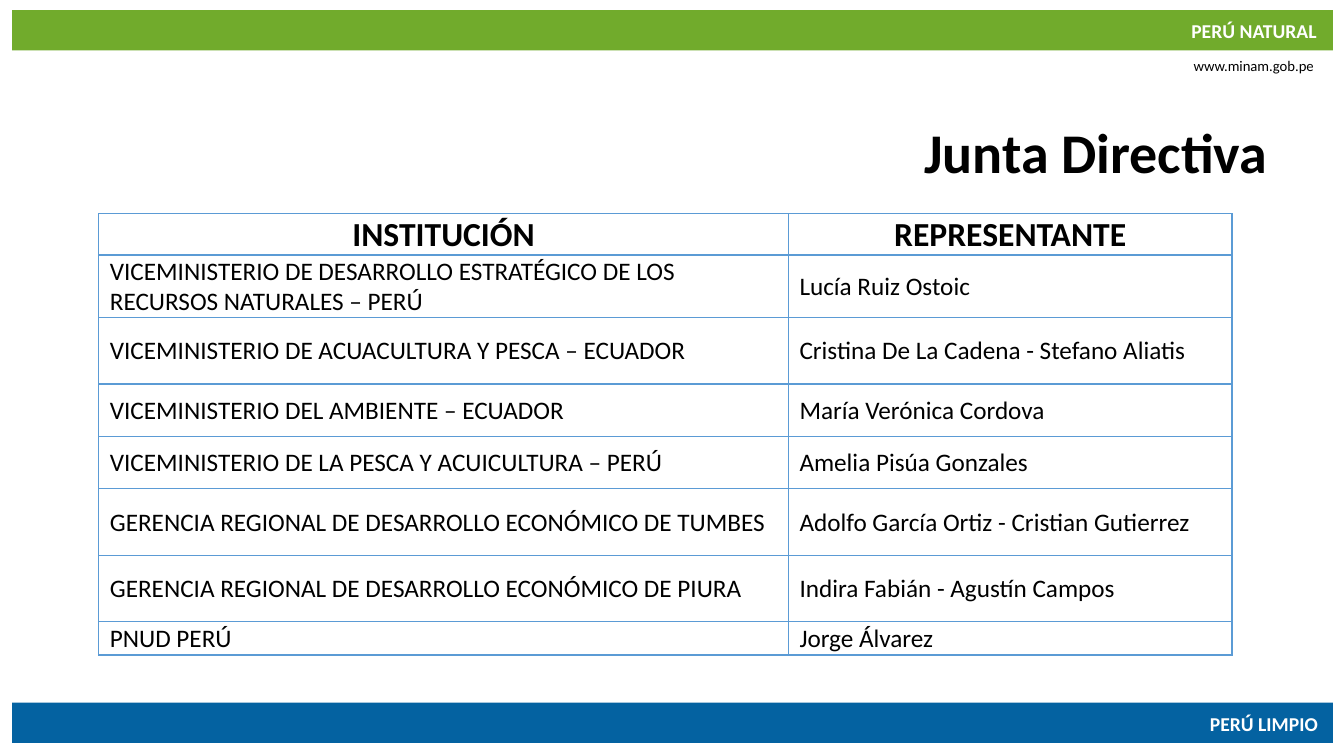
from lxml import etree
from pptx import Presentation
from pptx.dml.color import RGBColor
from pptx.enum.shapes import MSO_SHAPE as SHAPE
from pptx.enum.text import MSO_ANCHOR as ANCHOR, MSO_AUTO_SIZE as AUTO, PP_ALIGN as ALIGN
from pptx.oxml import parse_xml
from pptx.oxml.ns import nsdecls
from pptx.util import Inches, Pt

GREEN, BLUE, BORDER = "71AB2C", "0462A1", "5B9BD5"
BLACK, WHITE = "000000", "FFFFFF"


def rgb(color):
    return RGBColor.from_string(color)


def write(tf, text, size, color=BLACK, bold=False, align=ALIGN.RIGHT):
    """Put one formatted paragraph in the text frame and return it."""
    p = tf.paragraphs[0]
    p.alignment = align
    r = p.add_run()
    r.text = text
    for name, value in dict(name="Calibri", size=Pt(size), bold=bold).items():
        setattr(r.font, name, value)
    r.font.color.rgb = rgb(color)
    return p


prs = Presentation()
prs.slide_width, prs.slide_height = Inches(13.33), Inches(7.5)
s = prs.slides.add_slide(prs.slide_layouts[5])

# Bands at the foot and the head
for top, color in [(6.97, BLUE), (0.1, GREEN)]:
    sp = s.shapes.add_shape(SHAPE.RECTANGLE, Inches(0.12), Inches(top), Inches(13.1), Inches(0.4))
    sp.shadow.inherit = False
    sp.fill.solid()
    sp.fill.fore_color.rgb = rgb(color)
    sp.line.fill.background()

labels = [
    ("PERÚ NATURAL", 11.7, 0.14, 1.46, 0.34, 14, WHITE, True),
    ("PERÚ LIMPIO", 11.89, 7.01, 1.28, 0.34, 14, WHITE, True),
    ("www.minam.gob.pe", 11.71, 0.51, 1.42, 0.28, 10.5, BLACK, False),
]
for text, left, top, width, height, size, color, bold in labels:
    tf = s.shapes.add_textbox(Inches(left), Inches(top), Inches(width), Inches(height)).text_frame
    tf.word_wrap = False
    tf.auto_size = AUTO.SHAPE_TO_FIT_TEXT
    write(tf, text, size, color, bold)

# Board members
rows = [
    ("INSTITUCIÓN", "REPRESENTANTE", 0.41),
    ("VICEMINISTERIO DE DESARROLLO ESTRATÉGICO DE LOS RECURSOS NATURALES – PERÚ",
     "Lucía Ruiz Ostoic", 0.62),
    ("VICEMINISTERIO DE ACUACULTURA Y PESCA – ECUADOR",
     "Cristina De La Cadena - Stefano Aliatis", 0.66),
    ("VICEMINISTERIO DEL AMBIENTE – ECUADOR", "María Verónica Cordova", 0.52),
    ("VICEMINISTERIO DE LA PESCA Y ACUICULTURA – PERÚ", "Amelia Pisúa Gonzales", 0.52),
    ("GERENCIA REGIONAL DE DESARROLLO ECONÓMICO DE TUMBES",
     "Adolfo García Ortiz - Cristian Gutierrez", 0.66),
    ("GERENCIA REGIONAL DE DESARROLLO ECONÓMICO DE PIURA",
     "Indira Fabián - Agustín Campos", 0.66),
    ("PNUD PERÚ", "Jorge Álvarez", 0.33),
]
cell_format = dict(vertical_anchor=ANCHOR.MIDDLE, margin_left=Inches(0.01),
                   margin_right=Inches(0.01), margin_top=Inches(0.01), margin_bottom=0)
table = s.shapes.add_table(len(rows), 2, Inches(0.98), Inches(2.12),
                           Inches(11.24), Inches(4.38)).table
table.first_row = table.horz_banding = False
for column, width in zip(table.columns, (6.84, 4.4)):
    column.width = Inches(width)

for i, (institution, member, height) in enumerate(rows):
    table.rows[i].height = Inches(height)
    for j, text in enumerate((institution, member)):
        cell = table.cell(i, j)
        for name, value in cell_format.items():
            setattr(cell, name, value)
        if i == 0:
            write(cell.text_frame, text, 24, bold=True, align=ALIGN.CENTER)
        else:
            p = write(cell.text_frame, text, 18, align=ALIGN.LEFT)
            p._p.get_or_add_pPr().set("marL", str(Inches(0.1)))
        tcPr = cell._tc.get_or_add_tcPr()
        for side in ("lnL", "lnR", "lnT", "lnB"):
            tcPr.append(parse_xml(
                f'<a:{side} {nsdecls("a")} w="{Pt(1)}"><a:solidFill>'
                f'<a:srgbClr val="{BORDER}"/></a:solidFill></a:{side}>'))
        cell.fill.background()

# Title
title = s.shapes.title
title.left, title.top, title.width, title.height = map(Inches, (0.67, 1.19, 12, 0.59))
tf = title.text_frame
tf.word_wrap = True
tf.auto_size = AUTO.NONE
tf.vertical_anchor = ANCHOR.TOP
write(tf, "Junta Directiva", 40, bold=True).line_spacing = 0.9

prs.save("out.pptx")
